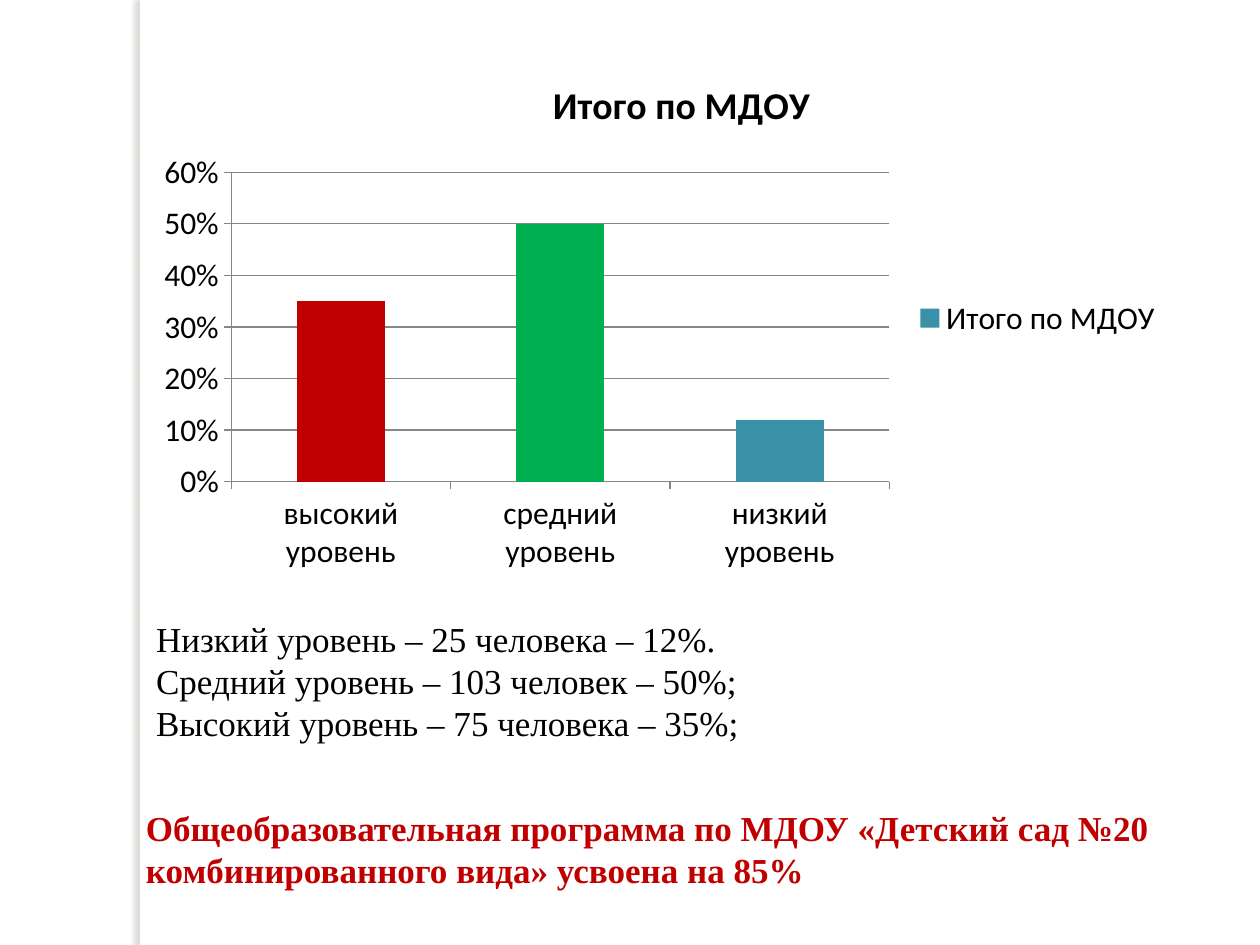
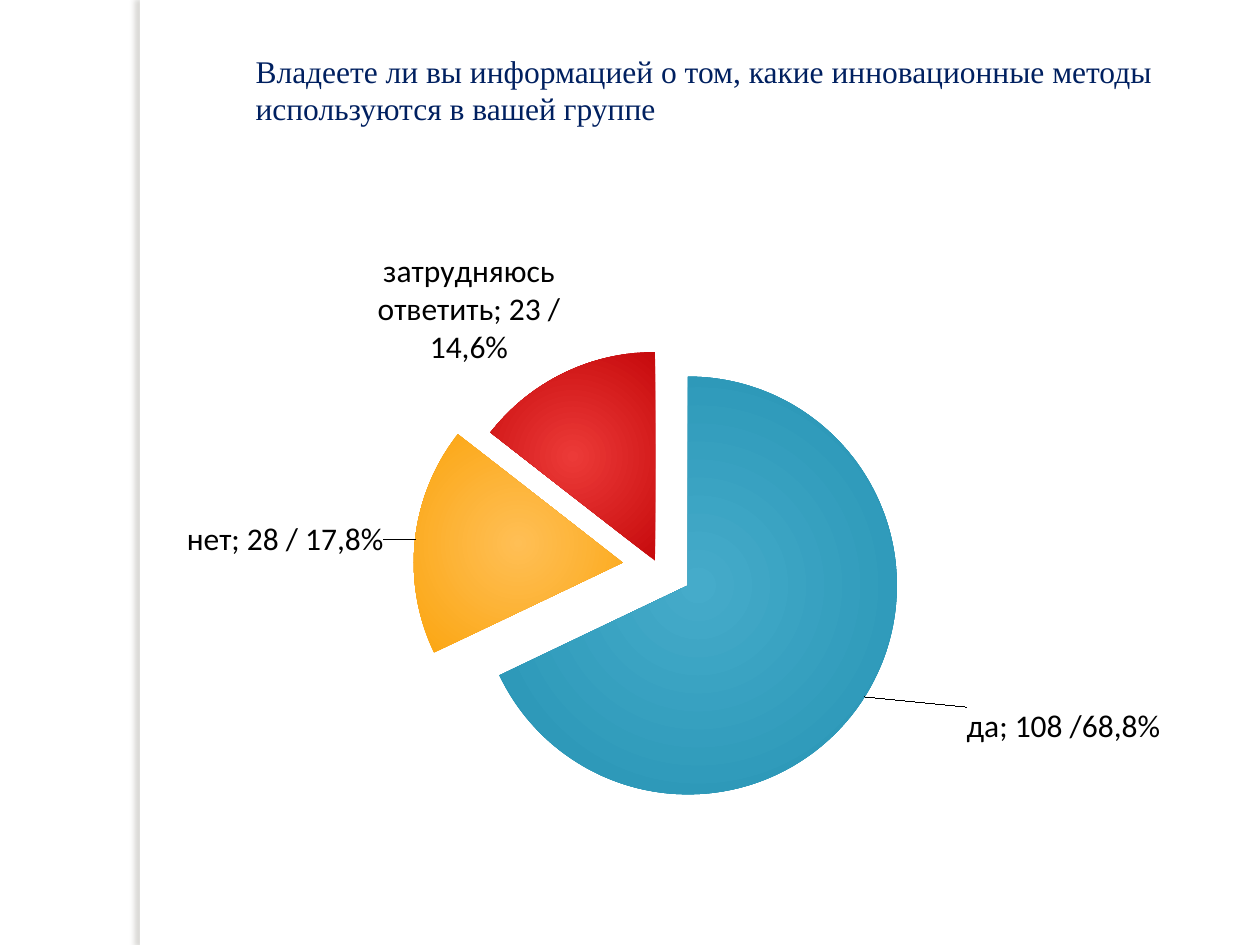
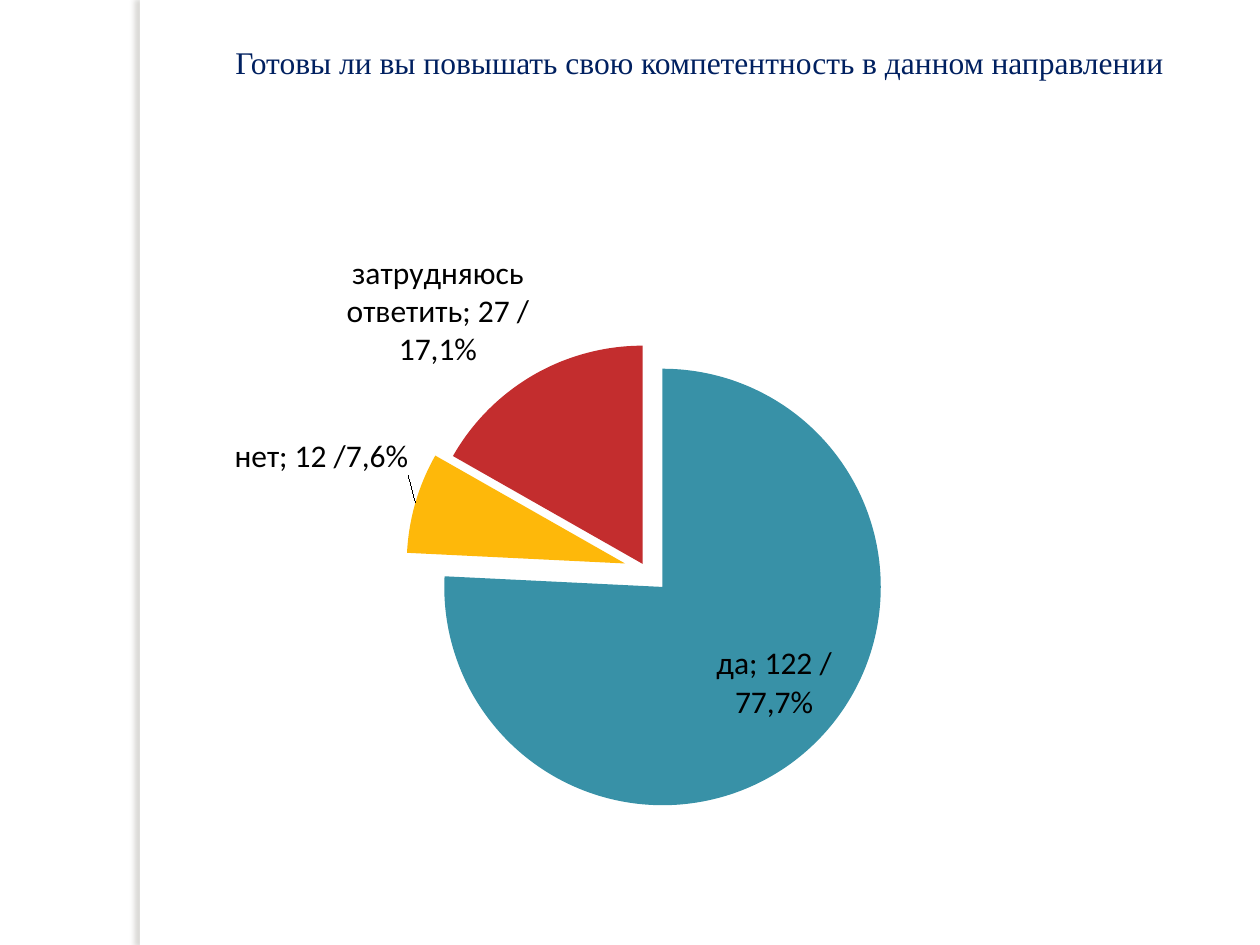
"""Build three slides with the results of a kindergarten programme and a parent survey."""
from lxml import etree
from pptx import Presentation
from pptx.chart.data import CategoryChartData
from pptx.dml.color import RGBColor
from pptx.enum.chart import XL_CHART_TYPE as ChartType
from pptx.enum.chart import XL_LABEL_POSITION as LabelPosition
from pptx.enum.chart import XL_LEGEND_POSITION as LegendPosition
from pptx.enum.chart import XL_TICK_MARK as TickMark
from pptx.enum.shapes import MSO_SHAPE as ShapeType
from pptx.oxml import parse_xml
from pptx.oxml.ns import nsdecls, qn
from pptx.util import Inches, Pt

WHITE, BLACK, NAVY, GRAY = "FFFFFF", "000000", "002060", "868686"
TEAL, AMBER, CRIMSON = "3891A7", "FEB80A", "C32D2E"
RED, GREEN = "C00000", "00B050"
SHADOW = f"""<a:effectLst {nsdecls('a')}>
<a:outerShdw blurRad="38100" dist="38100" dir="10800000" algn="tl" rotWithShape="0">
<a:srgbClr val="736F63"><a:alpha val="25000"/></a:srgbClr></a:outerShdw></a:effectLst>"""


def color(value):
    return RGBColor.from_string(value)


def add_text(slide, box, lines, size, text_color, bold=False):
    text_frame = slide.shapes.add_textbox(*map(Inches, box)).text_frame
    text_frame.word_wrap = True
    text_frame.text = "\n".join(lines)
    for paragraph in text_frame.paragraphs:
        paragraph.font.name = "Times New Roman"
        paragraph.font.size = Pt(size)
        paragraph.font.bold = bold
        paragraph.font.color.rgb = color(text_color)


presentation = Presentation()
presentation.slide_width, presentation.slide_height = Inches(10), Inches(7.5)

slides = []
for number in range(3):
    slide = presentation.slides.add_slide(presentation.slide_layouts[6])
    slide.background.fill.solid()
    slide.background.fill.fore_color.rgb = color(WHITE)
    band = slide.shapes.add_shape(ShapeType.RECTANGLE, Inches(1.11), 0, Inches(0.08), Inches(7.5))
    band.fill.solid()
    band.fill.fore_color.rgb = color(WHITE)
    band.line.fill.background()
    band._element.spPr.append(parse_xml(SHADOW))
    slides.append(slide)

summary_slide = slides[0]
levels = CategoryChartData(number_format="0%")
levels.categories = ["высокий уровень", "средний уровень", "низкий уровень"]
levels.add_series("Итого по МДОУ", [0.35, 0.5, 0.12])
chart = summary_slide.shapes.add_chart(
    ChartType.COLUMN_CLUSTERED, *map(Inches, (1.14, 0.44, 8.19, 4.17)), levels).chart
chart.font.name, chart.font.size = "Calibri", Pt(18)
chart.font.color.rgb = color(BLACK)
chart.has_title = True
chart.chart_title.text_frame.text = "Итого по МДОУ"
title_font = chart.chart_title.text_frame.paragraphs[0].font
title_font.name, title_font.size, title_font.bold = "Calibri", Pt(21.6), True
title_element = chart.chart_title._element
for old_layout in title_element.findall(qn("c:layout")):
    title_element.remove(old_layout)
title_element.find(qn("c:tx")).addnext(parse_xml(
    f'<c:layout {nsdecls("c")}><c:manualLayout><c:xMode val="edge"/><c:yMode val="edge"/>'
    '<c:x val="0.39"/><c:y val="0.03"/></c:manualLayout></c:layout>'))
chart.has_legend = True
chart.legend.position = LegendPosition.RIGHT
chart.legend.include_in_layout = False
for axis in (chart.category_axis, chart.value_axis):
    axis.major_tick_mark = TickMark.OUTSIDE
    axis.format.line.color.rgb = color(GRAY)
chart.value_axis.major_gridlines.format.line.color.rgb = color(GRAY)
chart.value_axis.minimum_scale, chart.value_axis.maximum_scale = 0, 0.6
chart.value_axis.major_unit = 0.1
plot = chart.plots[0]
plot.gap_width, plot.vary_by_categories = 150, False
columns = plot.series[0]
columns.format.fill.solid()
columns.format.fill.fore_color.rgb = color(TEAL)
for index, column_color in enumerate([RED, GREEN]):
    column_fill = columns.points[index].format.fill
    column_fill.solid()
    column_fill.fore_color.rgb = color(column_color)

add_text(summary_slide, (1.14, 4.85, 6.54, 1.11), [
    "Низкий уровень – 25 человека – 12%.",
    "Средний уровень – 103 человек – 50%;",
    "Высокий уровень – 75 человека – 35%;"], 20, BLACK)
add_text(summary_slide, (1.06, 6.35, 8.74, 0.77), [
    "Общеобразовательная программа по МДОУ «Детский сад №20 "
    "комбинированного вида» усвоена на 85%"], 20, RED, bold=True)

OUTSIDE, INSIDE = LabelPosition.OUTSIDE_END, LabelPosition.INSIDE_END
SOLID = [(TEAL,), (AMBER,), (CRIMSON,)]
GLOWING = [("45ABCA", "2593B3"), ("FFBF55", "FBA510"), ("EC3A38", "C60A0C")]
surveys = [
    (slides[1], (1.93, 0.36, 7.48, 0.71),
     "Владеете ли вы информацией о том, какие инновационные методы используются в вашей группе",
     [108, 28, 23], [17, 17, 3], GLOWING, (0.335, 0.235, 0.35, 0.667),
     [("да; 108 /68,8%", OUTSIDE, 0.08, 0.01),
      ("нет; 28 / 17,8%", OUTSIDE, -0.02, 0.03),
      ("затрудняюсь ответить; 23 / 14,6%", OUTSIDE, 0, 0)]),
    (slides[2], (1.77, 0.29, 7.95, 0.4),
     "Готовы ли вы повышать свою компетентность в данном направлении",
     [122, 12, 27], [11, 10, 3], SOLID, (0.32, 0.216, 0.37, 0.705),
     [("да; 122 / 77,7%", INSIDE, 0.02, -0.03),
      ("нет; 12 /7,6%", OUTSIDE, 0, -0.04),
      ("затрудняюсь ответить; 27 / 17,1%", OUTSIDE, 0, 0)]),
]

for slide, question_box, question, answers, explosions, fills, pie_box, labels in surveys:
    add_text(slide, question_box, [question], 18, NAVY)
    survey = CategoryChartData()
    survey.categories = ["да", "нет", "затрудняюсь ответить"]
    survey.add_series("Series 1", answers)
    chart = slide.shapes.add_chart(
        ChartType.PIE, *map(Inches, (0.33, 1.7, 9.5, 4.95)), survey).chart
    chart.font.name, chart.font.size = "Calibri", Pt(18)
    chart.font.color.rgb = color(BLACK)
    chart.has_title = chart.has_legend = False
    plot_area = chart._chartSpace.chart.plotArea
    for old_layout in plot_area.findall(qn("c:layout")):
        plot_area.remove(old_layout)
    pie_left, pie_top, pie_width, pie_height = (round(share, 2) for share in pie_box)
    plot_area.insert(0, parse_xml(
        f'<c:layout {nsdecls("c")}><c:manualLayout><c:layoutTarget val="inner"/>'
        f'<c:xMode val="edge"/><c:yMode val="edge"/>'
        f'<c:x val="{pie_left}"/><c:y val="{pie_top}"/>'
        f'<c:w val="{pie_width}"/><c:h val="{pie_height}"/></c:manualLayout></c:layout>'))
    pie = chart.plots[0].series[0]
    pie.data_labels.show_value = pie.data_labels.show_category_name = True
    for index, (explosion, fill, label) in enumerate(zip(explosions, fills, labels)):
        point = pie.points[index]
        point.format.fill.solid()
        point.format.fill.fore_color.rgb = color(fill[0])
        point.format.line.fill.background()
        data_point = pie._element.findall(qn("c:dPt"))[index]
        shape_properties = data_point.find(qn("c:spPr"))
        shape_properties.addprevious(
            parse_xml(f'<c:explosion {nsdecls("c")} val="{explosion}"/>'))
        if len(fill) == 2:
            shape_properties.replace(shape_properties.find(qn("a:solidFill")), parse_xml(
                f'<a:gradFill {nsdecls("a")}><a:gsLst>'
                f'<a:gs pos="0"><a:srgbClr val="{fill[0]}"/></a:gs>'
                f'<a:gs pos="100000"><a:srgbClr val="{fill[1]}"/></a:gs></a:gsLst>'
                '<a:path path="circle"><a:fillToRect l="50000" t="50000" r="50000" b="50000"/>'
                '</a:path></a:gradFill>'))
        text, position, shift_x, shift_y = label
        point.data_label.text_frame.text = text
        label_font = point.data_label.text_frame.paragraphs[0].font
        label_font.name, label_font.size = "Calibri", Pt(18)
        label_font.color.rgb = color(BLACK)
        point.data_label.position = position
        label_element = pie._element.find(qn("c:dLbls")).findall(qn("c:dLbl"))[index]
        label_element.find(qn("c:showCatName")).set("val", "1")
        for old_layout in label_element.findall(qn("c:layout")):
            label_element.remove(old_layout)
        layout = etree.Element(qn("c:layout"))
        manual_layout = etree.SubElement(layout, qn("c:manualLayout"))
        for axis_name, shift in (("c:x", shift_x), ("c:y", shift_y)):
            etree.SubElement(manual_layout, qn(axis_name), val=str(shift))
        label_element.find(qn("c:idx")).addnext(layout)

presentation.save("out.pptx")
